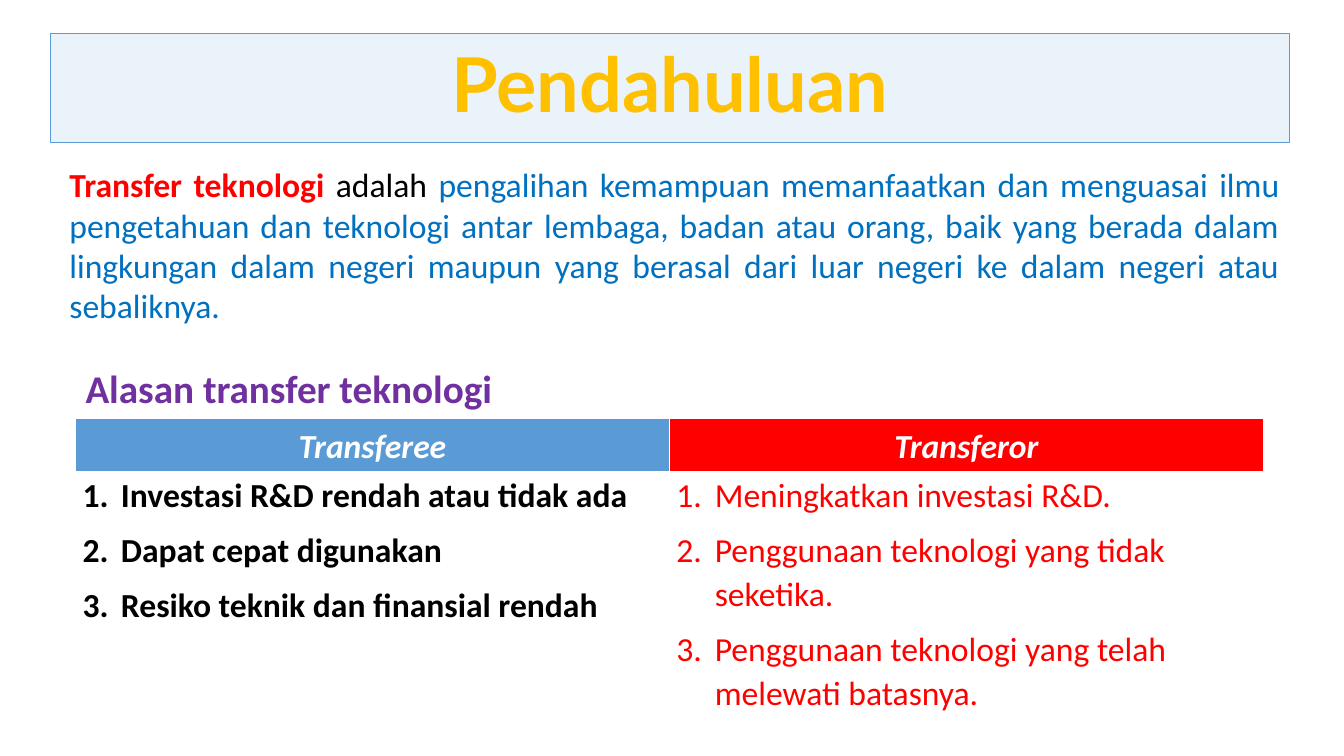
from lxml.etree import SubElement
from pptx import Presentation
from pptx.dml.color import RGBColor
from pptx.enum.shapes import MSO_SHAPE
from pptx.enum.text import MSO_ANCHOR as Anchor, MSO_AUTO_SIZE as AutoSize, PP_ALIGN as Align
from pptx.oxml.ns import qn
from pptx.util import Pt

EMU_PER_PX = 9144
WHITE = RGBColor(0xFF, 0xFF, 0xFF)
BLACK = RGBColor(0, 0, 0)
RED = RGBColor(0xFF, 0, 0)
GOLD = RGBColor(0xFF, 0xC0, 0)
BLUE = RGBColor(0x5B, 0x9B, 0xD5)
PALE_BLUE = RGBColor(0xDE, 0xEB, 0xF7)
DEEP_BLUE = RGBColor(0, 0x70, 0xC0)
PURPLE = RGBColor(0x70, 0x30, 0xA0)

DEFINITION = (
    "pengalihan kemampuan memanfaatkan dan menguasai ilmu pengetahuan dan teknologi "
    "antar lembaga, badan atau orang, baik yang berada dalam lingkungan dalam negeri "
    "maupun yang berasal dari luar negeri ke dalam negeri atau sebaliknya. "
)
TRANSFEREE_REASONS = [
    "Investasi R&D rendah atau tidak ada",
    "Dapat cepat digunakan",
    "Resiko teknik dan finansial rendah",
]
TRANSFEROR_REASONS = [
    "Meningkatkan investasi R&D.",
    "Penggunaan teknologi yang tidak seketika.",
    "Penggunaan teknologi yang telah melewati batasnya.",
]


def px(length):
    return length * EMU_PER_PX


def add_text(paragraph, text, color=BLACK, size=24, bold=False, italic=False, font="Calibri"):
    run = paragraph.add_run()
    run.text = text
    run.font.name = font
    run.font.size = Pt(size)
    run.font.bold = bold
    run.font.italic = italic
    run.font.color.rgb = color


def add_text_box(slide, left, top, width, height, wrap=True):
    box = slide.shapes.add_textbox(px(left), px(top), px(width), px(height))
    frame = box.text_frame
    frame.word_wrap = wrap
    frame.auto_size = AutoSize.SHAPE_TO_FIT_TEXT
    return frame.paragraphs[0]


def add_title(slide, text):
    banner = slide.shapes.add_shape(MSO_SHAPE.RECTANGLE, px(50), px(33), px(1229), px(108))
    banner.shadow.inherit = False
    banner.fill.solid()
    banner.fill.fore_color.rgb = PALE_BLUE
    color = banner.fill._xPr.find(qn("a:solidFill"))[0]
    SubElement(color, qn("a:alpha"), val="59000")
    banner.line.color.rgb = BLUE
    banner.line.width = Pt(0.75)
    banner.text_frame.vertical_anchor = Anchor.MIDDLE
    paragraph = banner.text_frame.paragraphs[0]
    paragraph.alignment = Align.CENTER
    paragraph.line_spacing = 0.9
    add_text(paragraph, text, color=GOLD, size=54, bold=True, font="Lato")


def number_paragraph(paragraph):
    properties = paragraph._p.get_or_add_pPr()
    properties.set("marL", str(px(38)))
    properties.set("indent", str(px(-38)))
    SubElement(properties, qn("a:buFont"), typeface="+mj-lt")
    SubElement(properties, qn("a:buAutoNum"), type="arabicPeriod")
    tabs = SubElement(properties, qn("a:tabLst"))
    SubElement(tabs, qn("a:tab"), pos=str(px(50)), algn="l")


def format_cell(cell, bottom_width, fill=None):
    cell.margin_left = cell.margin_right = px(7)
    cell.margin_top = cell.margin_bottom = 0
    properties = cell._tc.get_or_add_tcPr()
    for side, width in (("L", 1), ("R", 1), ("T", 1), ("B", bottom_width)):
        border = SubElement(properties, qn(f"a:ln{side}"), w=str(Pt(width)))
        solid = SubElement(border, qn("a:solidFill"))
        SubElement(solid, qn("a:srgbClr"), val=str(WHITE))
    if fill is None:
        cell.fill.background()
    else:
        cell.fill.solid()
        cell.fill.fore_color.rgb = fill


def fill_header(cell, text, fill):
    format_cell(cell, 3, fill)
    cell.vertical_anchor = Anchor.MIDDLE
    paragraph = cell.text_frame.paragraphs[0]
    paragraph.alignment = Align.CENTER
    paragraph.line_spacing = 1.07
    add_text(paragraph, text, color=WHITE, bold=True, italic=True)


def fill_reasons(cell, reasons, color, bold):
    format_cell(cell, 1)
    frame = cell.text_frame
    for index, reason in enumerate(reasons):
        paragraph = frame.add_paragraph() if index else frame.paragraphs[0]
        number_paragraph(paragraph)
        paragraph.line_spacing = 1.07
        paragraph.space_after = Pt(8)
        add_text(paragraph, reason, color=color, bold=bold)


def add_reason_table(slide):
    table = slide.shapes.add_table(2, 2, px(75), px(415), px(1178), px(310)).table
    table.rows[0].height = px(54)
    table.rows[1].height = px(256)
    columns = [
        ("Transferee", BLUE, TRANSFEREE_REASONS, BLACK, True),
        ("Transferor", RED, TRANSFEROR_REASONS, RED, False),
    ]
    for index, (heading, fill, reasons, color, bold) in enumerate(columns):
        fill_header(table.cell(0, index), heading, fill)
        fill_reasons(table.cell(1, index), reasons, color, bold)


def main():
    presentation = Presentation()
    presentation.slide_width = px(1333)
    presentation.slide_height = px(750)
    slide = presentation.slides.add_slide(presentation.slide_layouts[6])

    add_title(slide, "Pendahuluan")
    definition = add_text_box(slide, 59, 158, 1220, 212)
    definition.alignment = Align.JUSTIFY
    add_text(definition, "Transfer teknologi ", color=RED, bold=True)
    add_text(definition, "adalah ")
    add_text(definition, DEFINITION, color=DEEP_BLUE)
    add_reason_table(slide)
    subtitle = add_text_box(slide, 75, 357, 428, 57, wrap=False)
    add_text(subtitle, "Alasan transfer teknologi", color=PURPLE, size=28, bold=True)

    presentation.save("out.pptx")


if __name__ == "__main__":
    main()
